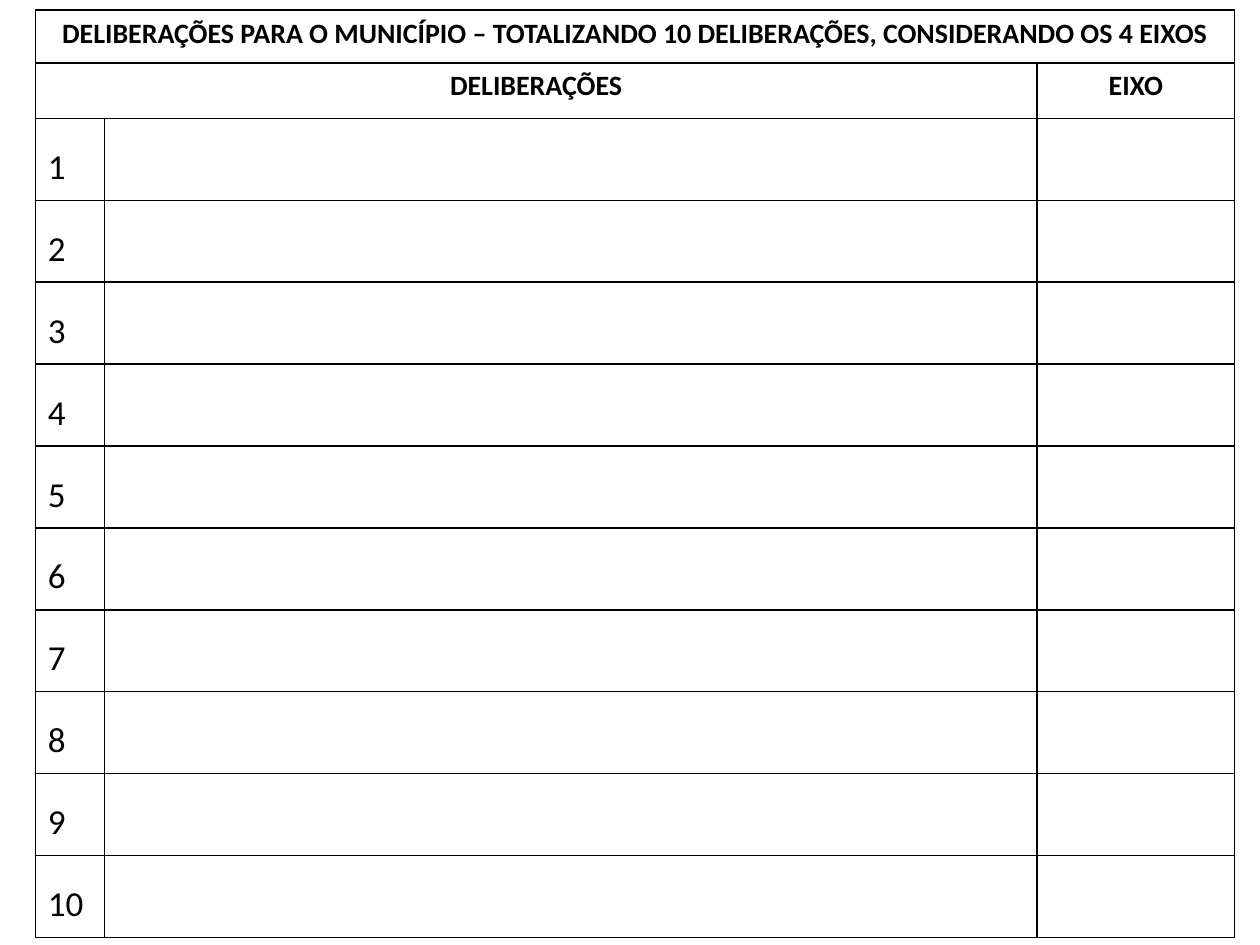
from lxml.etree import SubElement
from pptx import Presentation
from pptx.dml.color import RGBColor as RGB
from pptx.enum.text import PP_ALIGN as AL
from pptx.oxml.ns import qn
from pptx.util import Inches, Pt

# Content: each row lists its filled cells as (text, columns spanned)
HEADERS = [
    [("DELIBERAÇÕES PARA O MUNICÍPIO – TOTALIZANDO 10 DELIBERAÇÕES, "
      "CONSIDERANDO OS 4 EIXOS", 3)],
    [("DELIBERAÇÕES", 2), ("EIXO", 1)],
]
ENTRIES = [[(str(n), 1), ("", 1), ("", 1)] for n in range(1, 11)]

THEME = dict(font="Calibri", ink="000000", paper="FFFFFF", head=16, number=20, line=1)

# Grid, in inches
LEFT, TOP = 0.28, 0.08
COLS = [0.55, 7.4, 1.57]
ROWS = [0.42, 0.44] + [0.65] * len(ENTRIES)


def write(cell, text, size, bold=False, align=AL.LEFT, spacing=None):
    p = cell.text_frame.paragraphs[0]
    p.alignment, p.line_spacing = align, spacing
    if text:
        r = p.add_run()
        r.text = text
        r.font.name, r.font.size, r.font.bold = THEME["font"], Pt(size), bold
        r.font.color.rgb = RGB.from_string(THEME["ink"])


def frame(cell):
    """Draw all four borders, then fill the cell."""
    tc_pr = cell._tc.get_or_add_tcPr()
    for side in ("lnL", "lnR", "lnT", "lnB"):
        ln = SubElement(tc_pr, qn(f"a:{side}"), w=str(Pt(THEME["line"])))
        fill = SubElement(ln, qn("a:solidFill"))
        SubElement(fill, qn("a:srgbClr"), val=THEME["ink"])
    cell.fill.solid()
    cell.fill.fore_color.rgb = RGB.from_string(THEME["paper"])


prs = Presentation()
prs.slide_width, prs.slide_height = Inches(10), Inches(7.5)
s = prs.slides.add_slide(prs.slide_layouts[6])

# Table and its grid
table = s.shapes.add_table(len(ROWS), len(COLS), Inches(LEFT), Inches(TOP),
                           Inches(sum(COLS)), Inches(sum(ROWS))).table
table.first_row = table.horz_banding = False
for col, width in zip(table.columns, COLS):
    col.width = Inches(width)
for row, height in zip(table.rows, ROWS):
    row.height = Inches(height)
for cell in table.iter_cells():
    frame(cell)

# Headings and numbered rows
HEAD = dict(size=THEME["head"], bold=True, align=AL.CENTER)
ENTRY = dict(size=THEME["number"], spacing=1.5)
for i, row in enumerate(HEADERS + ENTRIES):
    style = HEAD if i < len(HEADERS) else ENTRY
    j = 0
    for text, span in row:
        cell = table.cell(i, j)
        if span > 1:
            cell.merge(table.cell(i, j + span - 1))
        write(cell, text, **style)
        j += span

prs.save("out.pptx")
